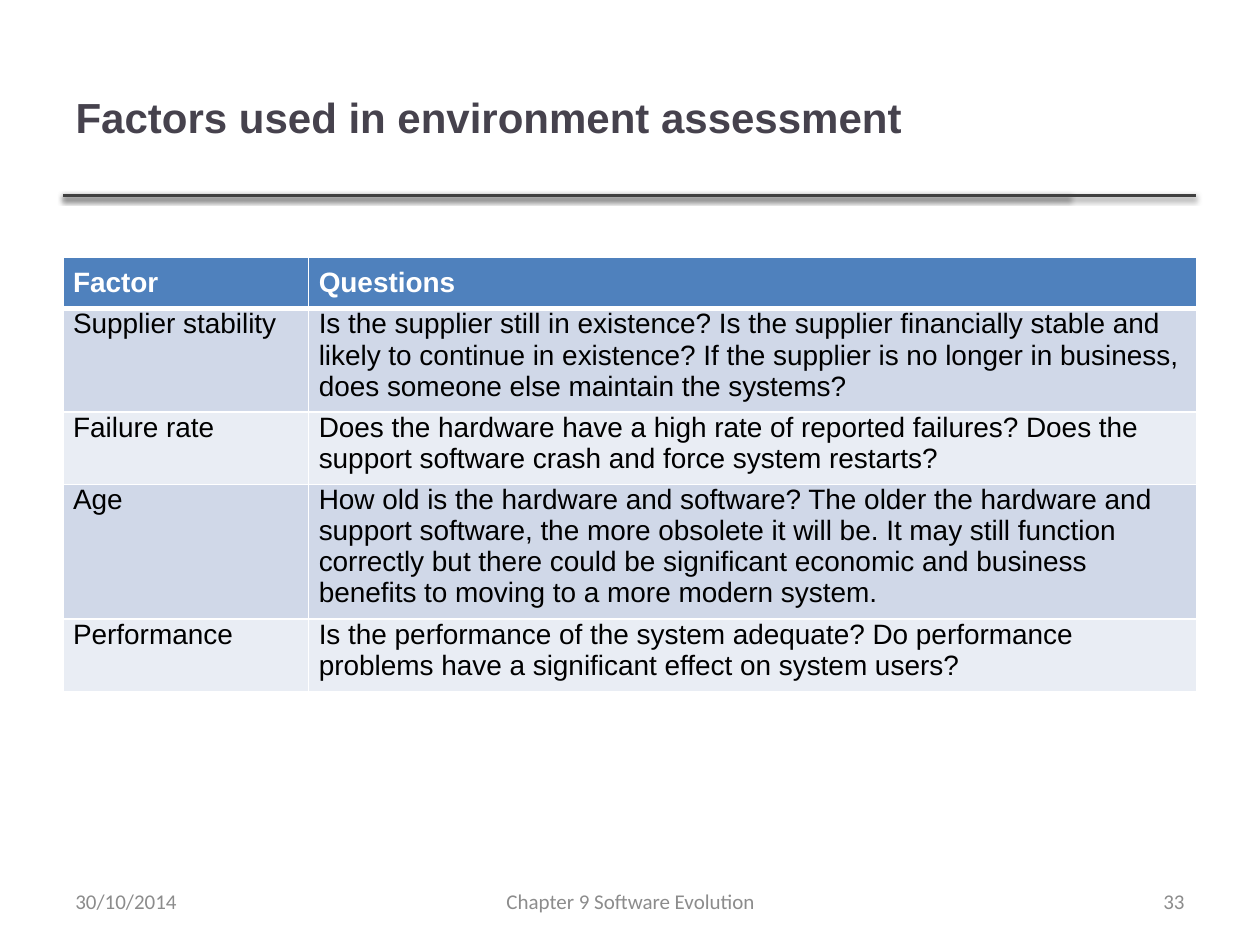
from lxml import etree
from pptx import Presentation
from pptx.dml.color import RGBColor
from pptx.enum.shapes import MSO_CONNECTOR
from pptx.enum.text import MSO_ANCHOR, PP_ALIGN
from pptx.oxml import parse_xml
from pptx.oxml.ns import nsdecls, qn
from pptx.util import Inches, Pt

STRAIGHT = MSO_CONNECTOR.STRAIGHT
TOP, MIDDLE = MSO_ANCHOR.TOP, MSO_ANCHOR.MIDDLE
LEFT, CENTER, RIGHT = PP_ALIGN.LEFT, PP_ALIGN.CENTER, PP_ALIGN.RIGHT

TITLE_COLOR = RGBColor(0x46, 0x42, 0x4D)
RULE_COLOR = RGBColor(0x40, 0x40, 0x40)
FOOTER_COLOR = RGBColor(0x8C, 0x8C, 0x8C)
HEADER_FILL = RGBColor(0x4F, 0x81, 0xBD)
BAND_FILLS = (RGBColor(0xD0, 0xD8, 0xE8), RGBColor(0xE9, 0xED, 0xF4))
WHITE = RGBColor(0xFF, 0xFF, 0xFF)
BLACK = RGBColor(0, 0, 0)

MARGIN = 0.5
ROW_HEIGHT = 0.41
CELL_INSET = 0.08
COLUMN_WIDTHS = (1.95, 7.05)
FACTORS = (
    ("Factor", "Questions"),
    ("Supplier stability",
     "Is the supplier still in existence? Is the supplier financially stable and "
     "likely to continue in existence? If the supplier is no longer in business, "
     "does someone else maintain the systems?"),
    ("Failure rate",
     "Does the hardware have a high rate of reported failures? Does the support "
     "software crash and force system restarts?"),
    ("Age",
     "How old is the hardware and software? The older the hardware and support "
     "software, the more obsolete it will be. It may still function correctly but "
     "there could be significant economic and business benefits to moving to a "
     "more modern system."),
    ("Performance",
     "Is the performance of the system adequate? Do performance problems have a "
     "significant effect on system users?"),
)


def write_text(frame, text, *, size, color, font="Arial", bold=False,
               align=LEFT, space_after=0):
    para = frame.paragraphs[0]
    para.alignment = align
    para.space_after = Pt(space_after)
    span = para.add_run()
    span.text = text
    span.font.name = font
    span.font.size = Pt(size)
    span.font.bold = bold
    span.font.color.rgb = color


def set_borders(cell, bottom_width):
    properties = cell._tc.get_or_add_tcPr()
    widths = {"lnL": 1, "lnR": 1, "lnT": 1, "lnB": bottom_width}
    for position, (tag, width) in enumerate(widths.items()):
        properties.insert(position, parse_xml(
            f'<a:{tag} {nsdecls("a")} w="{Pt(width)}">'
            f'<a:solidFill><a:srgbClr val="{WHITE}"/></a:solidFill></a:{tag}>'))


class SlideBuilder:
    def __init__(self, deck):
        self.slide = deck.slides.add_slide(deck.slide_layouts[5])

    def title(self, text, left, top, width, height):
        title = self.slide.shapes.title
        title.left, title.top = Inches(left), Inches(top)
        title.width, title.height = Inches(width), Inches(height)
        title.text_frame.vertical_anchor = MIDDLE
        write_text(title.text_frame, text, size=24, color=TITLE_COLOR, bold=True)

    def rule(self, left, right, top):
        """Draw a horizontal line with a soft shadow below it."""
        line = self.slide.shapes.add_connector(
            STRAIGHT, Inches(left), Inches(top), Inches(right), Inches(top))
        line.line.color.rgb = RULE_COLOR
        line.line.width = Pt(2)
        effects = etree.SubElement(line._element.spPr, qn("a:effectLst"))
        shadow = etree.SubElement(
            effects, qn("a:outerShdw"), blurRad=str(Pt(3.1)), dist=str(Pt(1.6)),
            dir="5400000", rotWithShape="0")
        color = etree.SubElement(shadow, qn("a:srgbClr"), val=str(BLACK))
        etree.SubElement(color, qn("a:alpha"), val="38000")

    def table(self, rows, left, top):
        table = self.slide.shapes.add_table(
            len(rows), len(COLUMN_WIDTHS), Inches(left), Inches(top),
            Inches(sum(COLUMN_WIDTHS)), Inches(ROW_HEIGHT * len(rows))).table
        for column, width in zip(table.columns, COLUMN_WIDTHS):
            column.width = Inches(width)
        for row_index, row in enumerate(rows):
            for column_index, text in enumerate(row):
                self.cell(table.cell(row_index, column_index), text, row_index)

    def cell(self, cell, text, row_index):
        header = row_index == 0
        cell.margin_left = cell.margin_right = cell.margin_bottom = Inches(CELL_INSET)
        cell.margin_top = Inches(CELL_INSET if header else 0)
        cell.vertical_anchor = TOP
        cell.fill.solid()
        cell.fill.fore_color.rgb = HEADER_FILL if header else BAND_FILLS[(row_index - 1) % 2]
        set_borders(cell, bottom_width=3 if header else 1)
        write_text(cell.text_frame, text, size=16, bold=header, space_after=6,
                   color=WHITE if header else BLACK)

    def footer(self, text, left, width, align):
        box = self.slide.shapes.add_textbox(
            Inches(left), Inches(6.95), Inches(width), Inches(0.4))
        box.text_frame.word_wrap = True
        box.text_frame.vertical_anchor = MIDDLE
        write_text(box.text_frame, text, size=12, color=FOOTER_COLOR,
                   font="Calibri", align=align)


def main():
    deck = Presentation()
    deck.slide_width, deck.slide_height = Inches(10), Inches(7.5)
    builder = SlideBuilder(deck)
    for right in (8.49, 9.49):
        builder.rule(MARGIN, right, 1.55)
    builder.title("Factors used in environment assessment", MARGIN, 0.3, 7.98, 1.25)
    builder.table(FACTORS, MARGIN, 2.04)
    builder.footer("Chapter 9 Software Evolution", 3.42, 3.17, CENTER)
    builder.footer("33", 7.17, 2.33, RIGHT)
    builder.footer("30/10/2014", MARGIN, 2.33, LEFT)
    deck.save("out.pptx")


if __name__ == "__main__":
    main()
